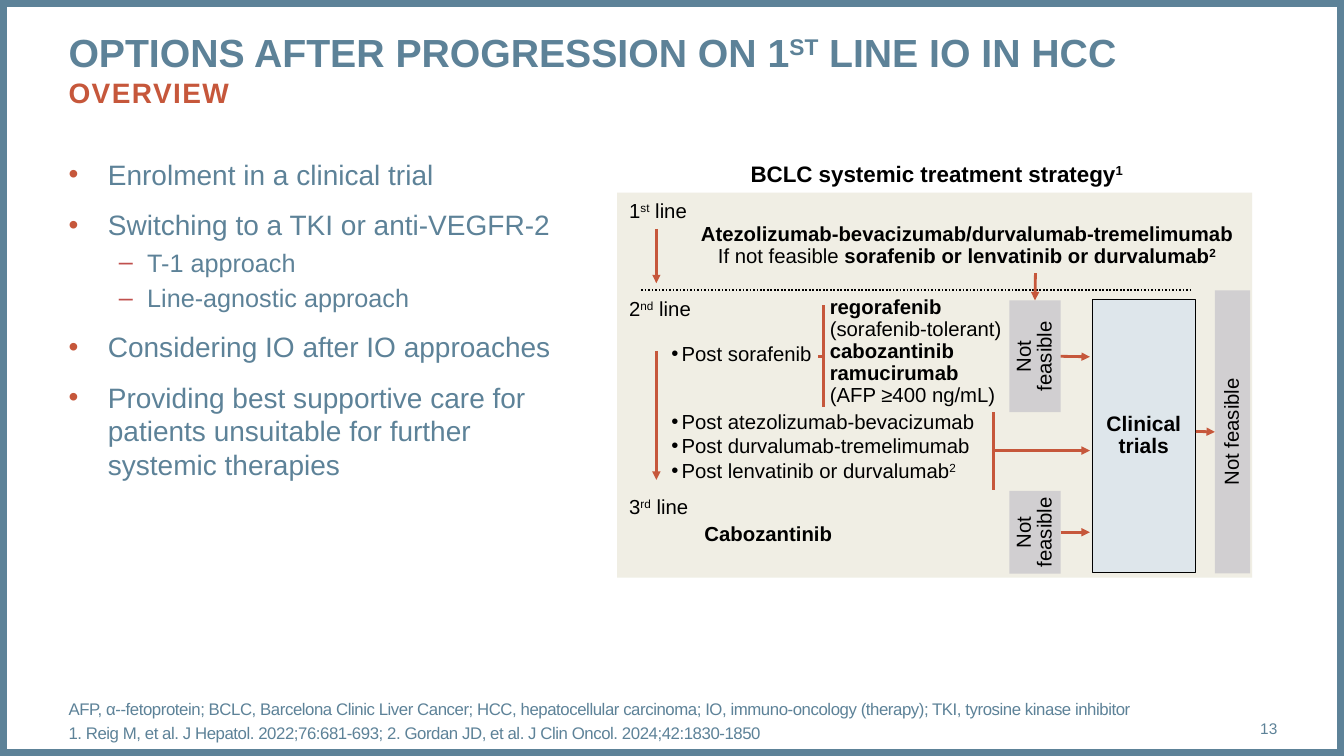
"""Build the slide on options after progression on first-line IO in HCC."""
from dataclasses import dataclass
from typing import Optional

import lxml.etree
import pptx
import pptx.dml.color
import pptx.enum.dml
import pptx.enum.shapes
import pptx.enum.text
import pptx.oxml.ns
import pptx.util

Inches = pptx.util.Inches
Align = pptx.enum.text.PP_ALIGN
Anchor = pptx.enum.text.MSO_ANCHOR
qn = pptx.oxml.ns.qn

BLUE, RED, BLACK = "5D8298", "C6573B", "000000"
GREY, SAND, PALE = "D1CFD1", "DDD9C3", "DEE6EB"


@dataclass
class Span:
    text: str
    bold: Optional[bool] = None
    raised: bool = False


@dataclass
class Para:
    spans: list[Span]
    size: float = 14.5
    color: str = BLACK
    bold: bool = False
    align: Align = Align.LEFT
    line: float = 1.0
    before: float = 0
    bullet: str = ""
    bullet_color: str = BLACK
    margin: float = 0.1
    hang: float = 0.1
    tracking: int = 0


@dataclass
class Box:
    frame: tuple[float, float, float, float]
    fill: str
    paras: list[Para]
    outline: str = ""
    upright: bool = True
    alpha: int = 100


@dataclass
class Link:
    start: tuple[float, float]
    end: tuple[float, float]
    arrow: bool = False
    color: str = RED
    width: float = 2
    dotted: bool = False
    begin_join: Optional[tuple[str, int]] = None
    end_join: Optional[tuple[str, int]] = None


def rgb(value: str) -> pptx.dml.color.RGBColor:
    return pptx.dml.color.RGBColor.from_string(value)


def plain(text: str, **style) -> Para:
    return Para([Span(text)], **style)


def write(text_frame, paras: list[Para], anchor=Anchor.TOP) -> None:
    text_frame.word_wrap = True
    text_frame.auto_size = pptx.enum.text.MSO_AUTO_SIZE.NONE
    text_frame.vertical_anchor = anchor
    text_frame.margin_left = text_frame.margin_right = 0
    text_frame.margin_top = text_frame.margin_bottom = 0
    for index, para in enumerate(paras):
        paragraph = text_frame.paragraphs[0] if index == 0 else text_frame.add_paragraph()
        paragraph.alignment = para.align
        paragraph.line_spacing = para.line
        paragraph.space_before = pptx.util.Pt(para.before if index else 0)
        if para.bullet:
            properties = paragraph._p.get_or_add_pPr()
            properties.set("marL", str(Inches(para.margin)))
            properties.set("indent", str(-Inches(para.hang)))
            color = lxml.etree.SubElement(properties, qn("a:buClr"))
            lxml.etree.SubElement(color, qn("a:srgbClr"), val=para.bullet_color)
            lxml.etree.SubElement(properties, qn("a:buFont"), typeface="Arial")
            lxml.etree.SubElement(properties, qn("a:buChar"), char=para.bullet)
        font = paragraph.font
        font.name, font.size = "Arial", pptx.util.Pt(para.size)
        font.bold = para.bold
        font.color.rgb = rgb(para.color)
        if para.tracking:
            font._element.set("spc", str(para.tracking))
        for span in para.spans:
            run = paragraph.add_run()
            run.text = span.text
            if span.bold is not None:
                run.font.bold = span.bold
            if span.raised:
                run.font._element.set("baseline", "30000")


def add_text(page, frame: tuple, paras: list[Para], anchor=Anchor.TOP) -> None:
    write(page.shapes.add_textbox(*map(Inches, frame)).text_frame, paras, anchor)


def add_box(page, box: Box):
    shape = page.shapes.add_shape(pptx.enum.shapes.MSO_SHAPE.RECTANGLE, *map(Inches, box.frame))
    shape.shadow.inherit = False
    shape.fill.solid()
    shape.fill.fore_color.rgb = rgb(box.fill)
    if box.alpha < 100:
        color = shape._element.spPr.find(".//" + qn("a:srgbClr"))
        lxml.etree.SubElement(color, qn("a:alpha"), val=str(box.alpha * 1000))
    if box.outline:
        shape.line.color.rgb = rgb(box.outline)
        shape.line.width = pptx.util.Pt(0.5)
    else:
        shape.line.fill.background()
    if box.paras:
        write(shape.text_frame, box.paras, Anchor.MIDDLE)
    if not box.upright:
        shape.text_frame._txBody.bodyPr.set("vert", "vert270")
    return shape


def add_link(page, link: Link, boxes: dict) -> None:
    connector = page.shapes.add_connector(
        pptx.enum.shapes.MSO_CONNECTOR.STRAIGHT, *map(Inches, link.start + link.end))
    if link.begin_join:
        connector.begin_connect(boxes[link.begin_join[0]], link.begin_join[1])
    if link.end_join:
        connector.end_connect(boxes[link.end_join[0]], link.end_join[1])
    connector.line.color.rgb = rgb(link.color)
    connector.line.width = pptx.util.Pt(link.width)
    if link.dotted:
        connector.line.dash_style = pptx.enum.dml.MSO_LINE.ROUND_DOT
    if link.arrow:
        outline = connector.line._get_or_add_ln()
        lxml.etree.SubElement(outline, qn("a:tailEnd"), type="triangle")
    lxml.etree.SubElement(connector._element.spPr, qn("a:effectLst"))


def centred(*lines: str, **style) -> list[Para]:
    return [plain(text, align=Align.CENTER, line=0.85, **style) for text in lines]


def point(text: str, level: int = 0) -> Para:
    if level:
        return plain(text, size=18, color=BLUE, before=4, bullet="–",
                     bullet_color="C0504D", margin=0.78, hang=0.28)
    return plain(text, size=20, color=BLUE, before=12, bullet="•",
                 bullet_color=RED, margin=0.39, hang=0.39)


BOXES = {
    "panel": Box((6.12, 1.91, 6.3, 3.82), SAND, [], alpha=44),
    "second": Box((10.01, 2.98, 0.51, 1.11), GREY, centred("Not", "feasible"), upright=False),
    "third": Box((10.01, 4.87, 0.51, 0.82), GREY, centred("Not", "feasible"), upright=False),
    "final": Box((12.05, 2.88, 0.35, 2.81), GREY, centred("Not feasible"), upright=False),
    "trials": Box((10.83, 2.97, 1.03, 2.71), PALE,
                  centred("Clinical", "trials", size=15, bold=True), outline=BLACK),
}
LINKS = [
    Link((6.36, 2.88), (11.82, 2.88), color=BLACK, width=1.25, dotted=True),
    Link((6.51, 2.27), (6.51, 2.81), arrow=True),
    Link((6.51, 3.48), (6.51, 4.76), arrow=True),
    Link((8.17, 3.03), (8.17, 4.04)),
    Link((8.15, 3.54), (8.11, 3.54)),
    Link((9.85, 4.09), (9.85, 4.86)),
    Link((9.85, 4.47), (10.81, 4.47), arrow=True),
    Link((10.27, 2.71), (10.27, 2.98), arrow=True, end_join=("second", 0)),
    Link((10.52, 3.54), (10.81, 3.54), arrow=True, begin_join=("second", 3)),
    Link((10.52, 5.28), (10.81, 5.28), arrow=True, begin_join=("third", 3)),
    Link((11.86, 4.28), (12.05, 4.28), arrow=True, end_join=("final", 1)),
]
LINE_LABELS = [("1", "st", 1.99), ("2", "nd", 2.97), ("3", "rd", 4.93)]
SECOND_LINE_DRUGS = [("regorafenib", True), ("(sorafenib-tolerant)", False),
                     ("cabozantinib", True), ("ramucirumab", True), ("(AFP ≥400 ng/mL)", False)]
FOOTNOTES = [
    "AFP, α--fetoprotein; BCLC, Barcelona Clinic Liver Cancer; HCC, hepatocellular carcinoma; "
    "IO, immuno-oncology (therapy); TKI, tyrosine kinase inhibitor",
    "1. Reig M, et al. J Hepatol. 2022;76:681-693; 2. Gordan JD, et al. J Clin Oncol. 2024;42:1830-1850",
]


def add_diagram(page) -> None:
    boxes = {name: add_box(page, box) for name, box in BOXES.items()}
    for link in LINKS:
        add_link(page, link, boxes)
    add_text(page, (7.35, 1.55, 3.88, 0.31), [Para(
        [Span("BCLC systemic treatment strategy"), Span("1", raised=True)],
        size=16, bold=True, align=Align.CENTER, line=1.15)])
    for number, suffix, top in LINE_LABELS:
        add_text(page, (6.24, top, 1.18, 0.22), [
            Para([Span(number), Span(suffix, raised=True), Span(" line")], line=0.9)])
    add_text(page, (6.8, 2.22, 5.58, 0.45), [
        plain("Atezolizumab-bevacizumab/durvalumab-tremelimumab",
              bold=True, align=Align.CENTER, line=0.9),
        Para([Span("If not feasible ", False), Span("sorafenib or lenvatinib or durvalumab"),
              Span("2", raised=True)], bold=True, align=Align.CENTER, line=0.9)])
    add_text(page, (6.66, 3.42, 1.45, 0.21), [plain("Post sorafenib", bullet="•", line=0.85)])
    add_text(page, (8.23, 2.95, 1.81, 1.1), [
        plain(text, bold=bold, line=0.9) for text, bold in SECOND_LINE_DRUGS])
    add_text(page, (6.66, 4.06, 3.31, 0.73), [
        plain("Post atezolizumab-bevacizumab", bullet="•"),
        plain("Post durvalumab-tremelimumab", bullet="•"),
        Para([Span("Post lenvatinib or durvalumab"), Span("2", raised=True)], bullet="•")])
    add_text(page, (6.7, 5.2, 1.84, 0.22), [
        plain("Cabozantinib", bold=True, align=Align.CENTER, line=0.9)])


def main() -> None:
    deck = pptx.Presentation()
    deck.slide_width, deck.slide_height = Inches(13.33), Inches(7.5)
    page = deck.slides.add_slide(deck.slide_layouts[5])
    border = page.shapes.add_shape(pptx.enum.shapes.MSO_SHAPE.RECTANGLE, 0, 0,
                                   deck.slide_width, deck.slide_height)
    border.shadow.inherit = False
    border.fill.background()
    border.line.color.rgb = rgb(BLUE)
    border.line.width = pptx.util.Pt(10)
    title = page.shapes.title
    title.left, title.top, title.width, title.height = map(Inches, (0.68, 0.28, 11.99, 0.94))
    write(title.text_frame, [
        Para([Span("OPTIONS AFTER PROGRESSION ON 1"), Span("ST", raised=True),
              Span(" LINE IO IN HCC")], size=28, color=BLUE, bold=True),
        plain("OVERVIEW", size=20, color=RED, bold=True, tracking=100)])
    add_diagram(page)
    add_text(page, (0.68, 1.56, 4.96, 4.95), [
        point("Enrolment in a clinical trial"),
        point("Switching to a TKI or anti-VEGFR-2"),
        point("T-1 approach", 1),
        point("Line-agnostic approach", 1),
        point("Considering IO after IO approaches"),
        point("Providing best supportive care for patients unsuitable for further systemic therapies")])
    add_text(page, (0.68, 6.95, 11.13, 0.4), [
        plain(text, size=12, color=BLUE, before=3, tracking=-30) for text in FOOTNOTES], Anchor.MIDDLE)
    add_text(page, (11.81, 7.03, 0.86, 0.4), [
        plain("13", size=11, color=BLUE, align=Align.RIGHT)], Anchor.MIDDLE)
    deck.save("out.pptx")


if __name__ == "__main__":
    main()
